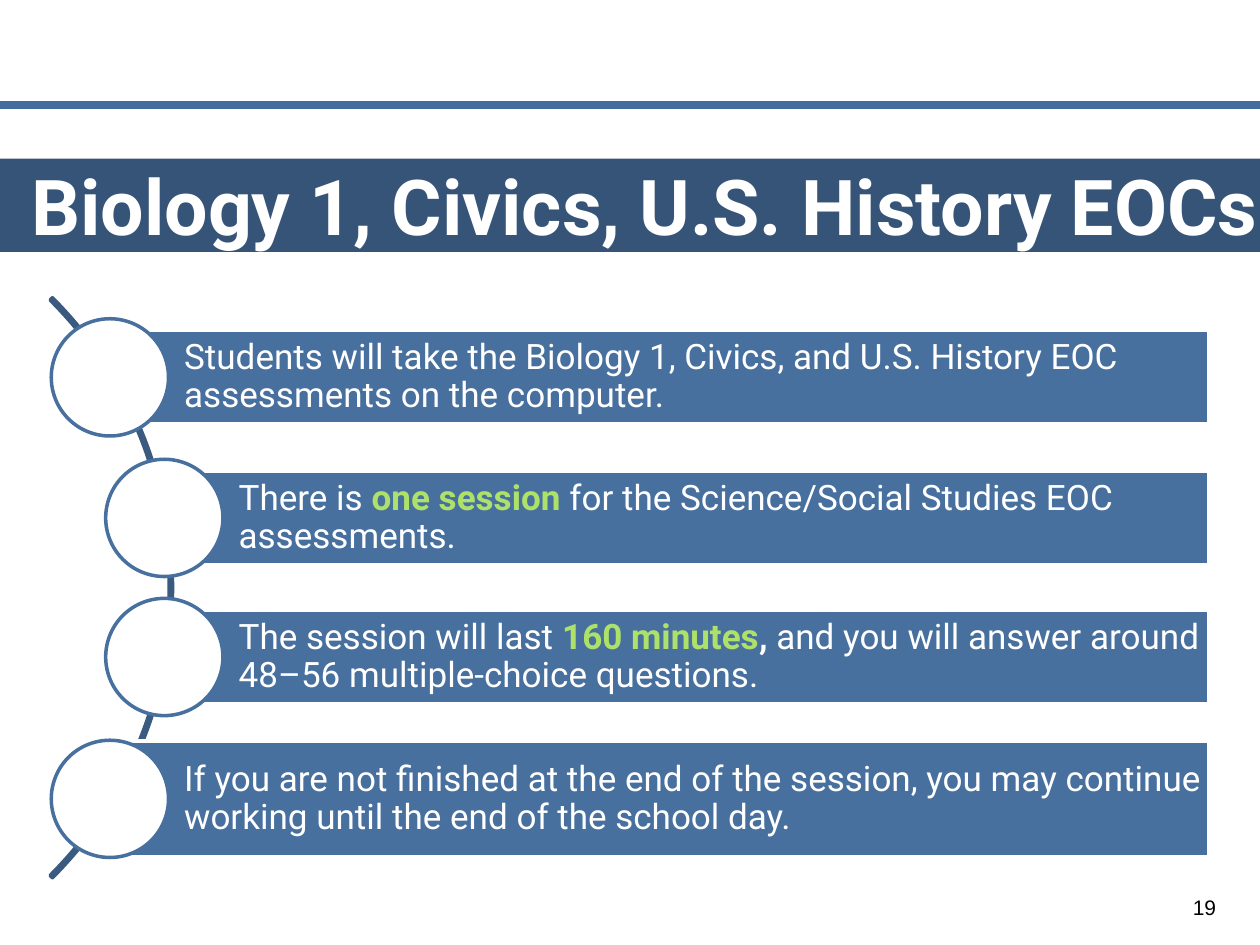
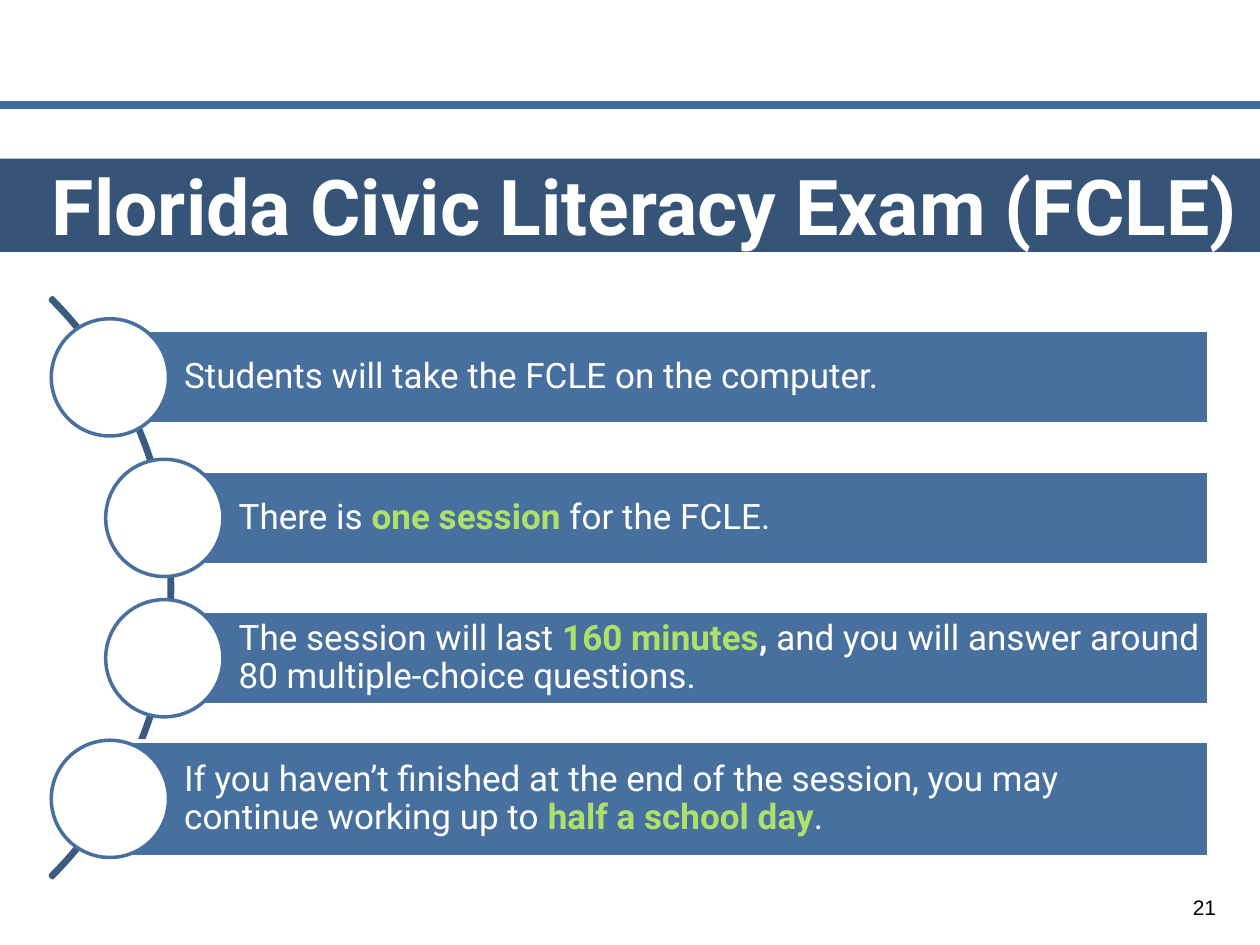
from lxml import etree
from pptx import Presentation
from pptx import util as u
from pptx.dml.color import RGBColor
from pptx.enum import shapes, text
from pptx.oxml.ns import qn

Pt = u.Pt
HUES = {
    "rule": "446D9E",
    "arc": "3A5A7F",
    "bar": "48709F",
    "band": "365477",
    "key": "AEE169",
    "white": "FFFFFF",
    "black": "000000",
}
WIDE, HIGH = 720, 540
RIGHT = 691
DOT = 67
NEAR, FAR = 62.8, 93.9
LOW, TALL = 53.5, 66.2


def hue(name):
    return RGBColor.from_string(HUES[name])


def key(words):
    return words, "key", True


def write(frame, runs, size=20, font="Roboto", color="white", bold=False,
          align=text.PP_ALIGN.LEFT, anchor=text.MSO_ANCHOR.MIDDLE,
          inset=(0, 0, 0, 0), lead=None, indent=None):
    frame.word_wrap = True
    frame.auto_size = text.MSO_AUTO_SIZE.NONE
    frame.vertical_anchor = anchor
    (frame.margin_left, frame.margin_top,
     frame.margin_right, frame.margin_bottom) = map(Pt, inset)
    para = frame.paragraphs[0]
    para.alignment = align
    if lead:
        para.line_spacing = lead
    if indent:
        props = para._p.get_or_add_pPr()
        props.set("marL", str(Pt(indent)))
        props.set("indent", "0")
    for part in runs:
        words, tint, heavy = (part, color, bold) if isinstance(part, str) else part
        run = para.add_run()
        run.text = words
        run.font.name = font
        run.font.size = Pt(size)
        run.font.bold = heavy
        run.font.color.rgb = hue(tint)


def draw(slide, kind, box, fill=None, line=None):
    shape = slide.shapes.add_shape(kind, *map(Pt, box))
    shape.shadow.inherit = False
    if fill:
        shape.fill.solid()
        shape.fill.fore_color.rgb = hue(fill)
    else:
        shape.fill.background()
    shape.line.color.rgb = hue(line)
    shape.line.width = Pt(2)
    return shape


def add_rule(slide):
    rule = slide.shapes.add_connector(
        shapes.MSO_CONNECTOR.STRAIGHT, 0, Pt(60), Pt(WIDE), Pt(60))
    rule.line.color.rgb = hue("rule")
    rule.line.width = Pt(4.5)
    etree.SubElement(rule._element.spPr, qn("a:effectLst"))


def add_title(slide, words):
    title = slide.shapes.title
    title.left, title.top, title.width, title.height = map(
        Pt, (-0.5, 90.6, 720.5, 53.4))
    title.fill.solid()
    title.fill.fore_color.rgb = hue("band")
    write(title.text_frame, [words], size=44, bold=True, indent=18,
          align=text.PP_ALIGN.CENTER, anchor=text.MSO_ANCHOR.TOP)


def add_arc(slide):
    arc = draw(slide, shapes.MSO_SHAPE.BLOCK_ARC,
               (-370.1, 101.5, 468.7, 468.7), line="arc")
    for i, value in enumerate((189, 27, 0.004)):
        arc.adjustments[i] = value


def add_step(slide, left, top, high, runs):
    bar = draw(slide, shapes.MSO_SHAPE.RECTANGLE,
               (left, top, RIGHT - left, high), "bar", "white")
    write(bar.text_frame, runs, lead=0.9, inset=(42.5, 4.3, 4.3, 4.3))
    draw(slide, shapes.MSO_SHAPE.OVAL,
         (left - DOT / 2, top + (high - DOT) / 2, DOT, DOT), "white", "bar")


def add_page(slide, number):
    box = slide.shapes.add_textbox(*map(Pt, (671.8, 504, 33, 28.8)))
    write(box.text_frame, [str(number)], size=12, font="Arial", color="black",
          align=text.PP_ALIGN.CENTER)


def add_slide(deck, title, number, third, steps):
    slide = deck.slides.add_slide(deck.slide_layouts[5])
    add_rule(slide)
    add_title(slide, title)
    add_arc(slide)
    spots = ((NEAR, 188.9, LOW), (FAR, 269.2, LOW),
             (FAR, third, LOW), (NEAR, 423.4, TALL))
    for spot, runs in zip(spots, steps):
        add_step(slide, *spot, runs)
    add_page(slide, number)


def timing(count):
    return ["The session will last ", key("160 minutes"), (", ", "white", True),
            f"and you will answer around {count} multiple-choice questions."]


def session(exam):
    return ["There is ", key("one session "), f"for the {exam}."]


def main():
    deck = Presentation()
    deck.slide_width, deck.slide_height = Pt(WIDE), Pt(HIGH)
    add_slide(deck, "Biology 1, Civics, U.S. History EOCs", 19, 348.7, [
        ["Students will take the Biology 1, Civics, and U.S. History EOC "
         "assessments on the computer."],
        session("Science/Social Studies EOC assessments"),
        timing("48–56"),
        ["If you are not finished at the end of the session, you may "
         "continue working until the end of the school day."],
    ])
    add_slide(deck, "Florida Civic Literacy Exam (FCLE)", 21, 349.4, [
        ["Students will take the FCLE on the computer."],
        session("FCLE"),
        timing("80"),
        ["If you haven’t finished at the end of the session, you may "
         "continue working up to ", key("half a school day"), "."],
    ])
    deck.save("out.pptx")


if __name__ == "__main__":
    main()
